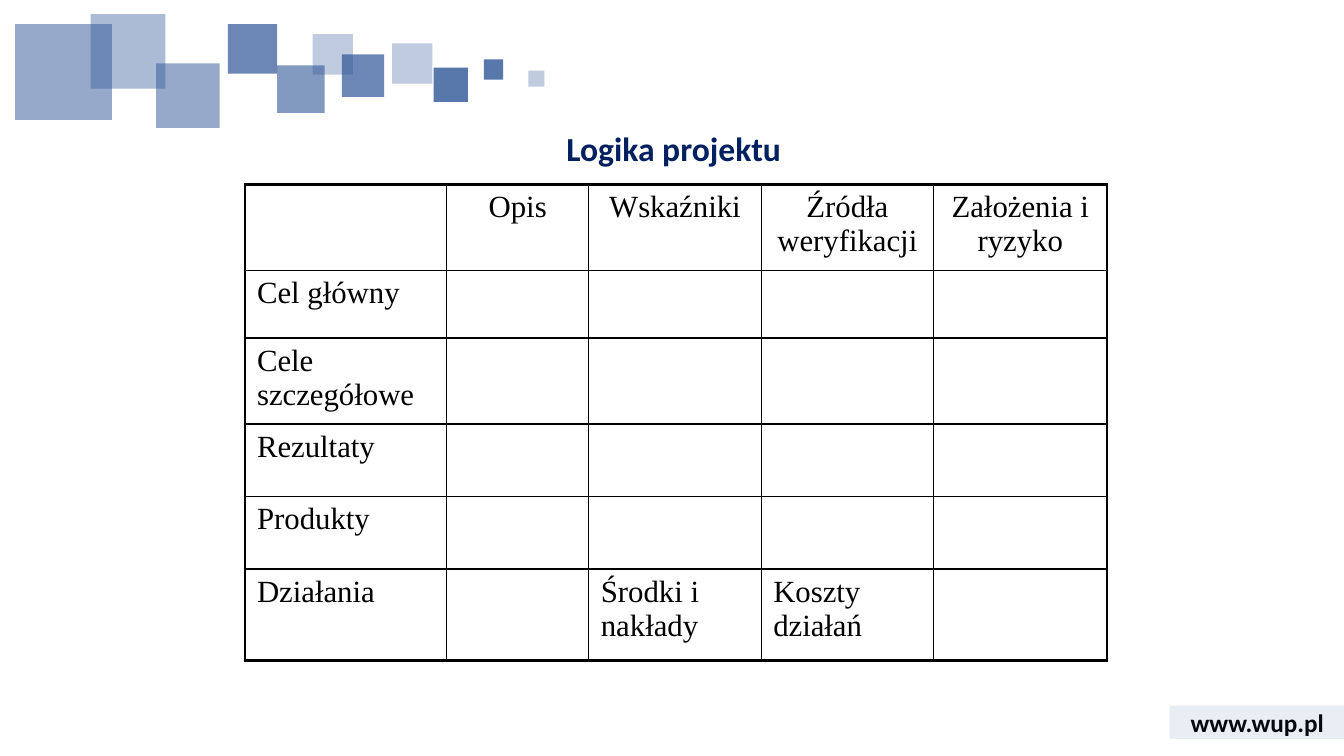
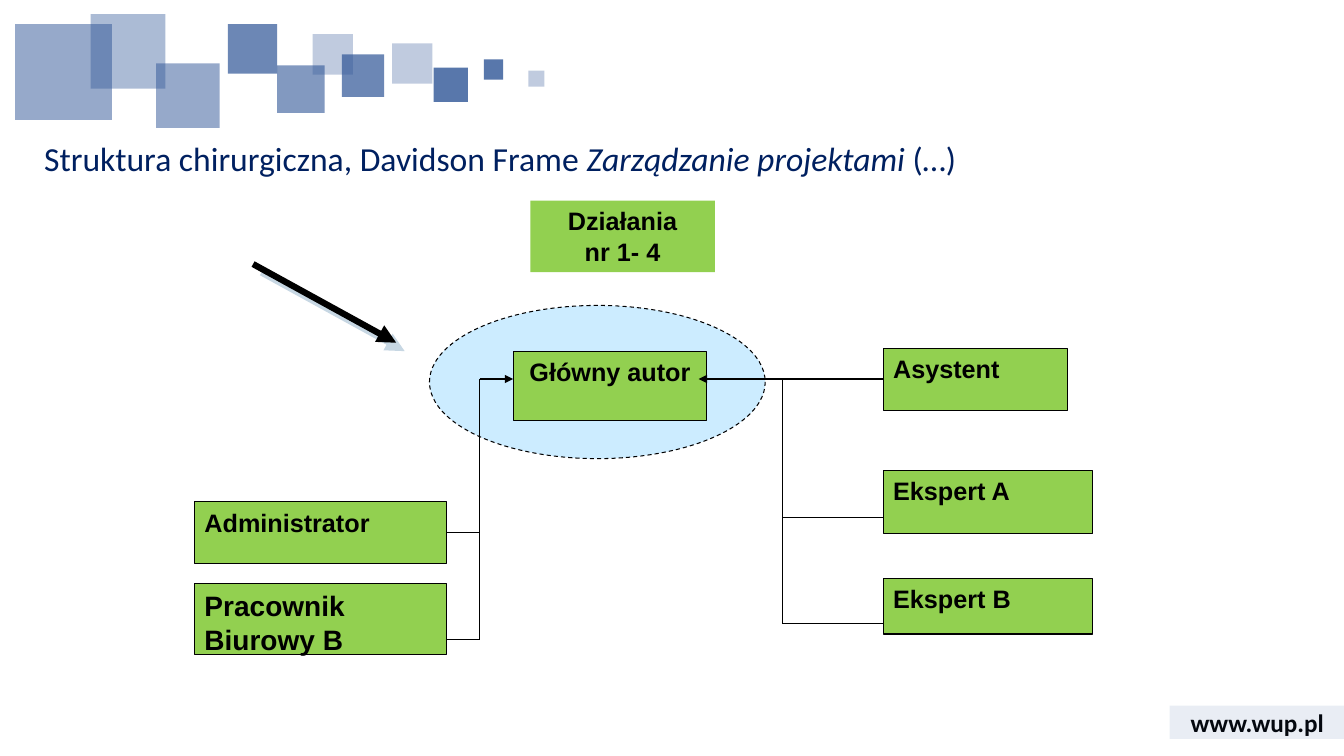
from lxml import etree
from pptx import Presentation
from pptx.dml.color import RGBColor
from pptx.enum.dml import MSO_LINE
from pptx.enum.shapes import MSO_CONNECTOR, MSO_SHAPE
from pptx.enum.text import MSO_ANCHOR, PP_ALIGN
from pptx.oxml.ns import qn
from pptx.util import Inches, Pt

BLACK = RGBColor(0x00, 0x00, 0x00)
NAVY = RGBColor(0x00, 0x20, 0x60)
BLUE = RGBColor(0x2F, 0x55, 0x97)
PALE_BLUE = RGBColor(0xCC, 0xEC, 0xFF)
SHADOW_BLUE = RGBColor(0xC7, 0xD7, 0xE3)
GREEN = RGBColor(0x92, 0xD0, 0x50)
TITLE_STYLE = {"font": "Calibri", "size": 24, "color": NAVY}


def write(frame, text, font, size, color=BLACK, bold=False, align=PP_ALIGN.LEFT):
    frame.text = text
    for paragraph in frame.paragraphs:
        paragraph.alignment = align
        paragraph.font.name = font
        paragraph.font.size = Pt(size)
        paragraph.font.color.rgb = color
        paragraph.font.bold = bold


def add_line(slide, x1, y1, x2, y2, width=0.75, arrow=False):
    """Draw a black line without shadow and return its empty effect list."""
    line = slide.shapes.add_connector(
        MSO_CONNECTOR.STRAIGHT, Inches(x1), Inches(y1), Inches(x2), Inches(y2))
    line.line.width = Pt(width)
    line.line.color.rgb = BLACK
    if arrow:
        etree.SubElement(line.line._get_or_add_ln(), qn("a:tailEnd"), type="triangle")
    return etree.SubElement(line.element.spPr, qn("a:effectLst"))


prs = Presentation()
prs.slide_width = Inches(13.33)
prs.slide_height = Inches(7.5)
blank = prs.slide_layouts[6]
for placeholder in list(blank.placeholders):
    placeholder.element.getparent().remove(placeholder.element)

logic = prs.slides.add_slide(blank)
structure = prs.slides.add_slide(blank)

# Shared banner and footer: drawn once, then moved to the layout
footer = logic.shapes.add_textbox(Inches(11.67), Inches(6.97), Inches(1.6), Inches(0.4))
footer.text_frame.word_wrap = True
footer.text_frame.vertical_anchor = MSO_ANCHOR.MIDDLE
write(footer.text_frame, "www.wup.pl", "Calibri", 18, bold=True, align=PP_ALIGN.CENTER)

# left, top, width, height, opacity in percent
BLUE_BLOCKS = [
    (3.89, 0.43, 0.4, 0.4, 30),
    (4.3, 0.67, 0.34, 0.34, 80),
    (3.39, 0.54, 0.42, 0.42, 70),
    (0.15, 0.24, 0.96, 0.95, 50),
    (2.75, 0.65, 0.47, 0.47, 60),
    (1.55, 0.63, 0.63, 0.64, 50),
    (0.9, 0.14, 0.74, 0.74, 40),
    (4.8, 0.59, 0.19, 0.2, 80),
    (2.26, 0.24, 0.49, 0.49, 70),
    (3.1, 0.34, 0.4, 0.4, 30),
    (5.24, 0.7, 0.16, 0.16, 30),
    (11.6, 7, 1.73, 0.33, 10),
]
for *box, opacity in BLUE_BLOCKS:
    block = logic.shapes.add_shape(MSO_SHAPE.RECTANGLE, *map(Inches, box))
    block.shadow.inherit = False
    block.line.fill.background()
    block.fill.solid()
    block.fill.fore_color.rgb = BLUE
    color = block.element.spPr.find(f"{qn('a:solidFill')}/{qn('a:srgbClr')}")
    etree.SubElement(color, qn("a:alpha"), val=str(opacity * 1000))

for shared in list(logic.shapes):
    blank.shapes.element.append(shared.element)

# Slide 1: project logic table
COLUMN_WIDTHS = [2, 1.41, 1.71, 1.71, 1.72]
ROW_HEIGHTS = [0.85, 0.67, 0.85, 0.72, 0.72, 0.91]
MATRIX = [
    ["", "Opis", "Wskaźniki", "Źródła weryfikacji", "Założenia i ryzyko"],
    ["Cel główny", "", "", "", ""],
    ["Cele szczegółowe", "", "", "", ""],
    ["Rezultaty", "", "", "", ""],
    ["Produkty", "", "", "", ""],
    ["Działania", "", "Środki i nakłady", "Koszty działań", ""],
]
last_row, last_column = len(ROW_HEIGHTS) - 1, len(COLUMN_WIDTHS) - 1
matrix = logic.shapes.add_table(
    len(ROW_HEIGHTS), len(COLUMN_WIDTHS), Inches(2.43), Inches(1.83),
    Inches(sum(COLUMN_WIDTHS)), Inches(sum(ROW_HEIGHTS))).table
matrix.first_row = False
matrix.horz_banding = False
for column, width in zip(matrix.columns, COLUMN_WIDTHS):
    column.width = Inches(width)
for row, height in zip(matrix.rows, ROW_HEIGHTS):
    row.height = Inches(height)

for r, texts in enumerate(MATRIX):
    for c, text in enumerate(texts):
        cell = matrix.cell(r, c)
        cell.margin_left = cell.margin_right = Inches(0.12)
        cell.margin_top = cell.margin_bottom = Inches(0.06)
        write(cell.text_frame, text, "Times New Roman", 22,
              align=PP_ALIGN.CENTER if r == 0 else PP_ALIGN.LEFT)
        outer_edges = {"lnL": c == 0, "lnR": c == last_column,
                       "lnT": r == 0, "lnB": r == last_row}
        properties = cell._tc.get_or_add_tcPr()
        for edge, is_outer in outer_edges.items():
            border = etree.SubElement(properties, qn(f"a:{edge}"),
                                      w=str(Pt(2.25 if is_outer else 1)))
            fill = etree.SubElement(border, qn("a:solidFill"))
            etree.SubElement(fill, qn("a:srgbClr"), val=str(BLACK))
        cell.fill.background()

title = logic.shapes.add_textbox(Inches(5.52), Inches(1.22), Inches(2.36), Inches(0.5))
title.text_frame.word_wrap = False
write(title.text_frame, "Logika projektu", bold=True, **TITLE_STYLE)

# Slide 2: surgical team structure
title = structure.shapes.add_textbox(Inches(0.34), Inches(1.36), Inches(12.41), Inches(0.55))
title.text_frame.word_wrap = True
write(title.text_frame, "Struktura chirurgiczna, Davidson Frame ", **TITLE_STYLE)
heading = title.text_frame.paragraphs[0]
heading.line_spacing = 0.9
book = heading.add_run()
book.text = "Zarządzanie projektami "
book.font.italic = True
heading.add_run().text = "(…)"

core = structure.shapes.add_shape(
    MSO_SHAPE.OVAL, Inches(4.26), Inches(3.03), Inches(3.33), Inches(1.52))
core.shadow.inherit = False
core.fill.solid()
core.fill.fore_color.rgb = PALE_BLUE
core.line.color.rgb = BLACK
core.line.width = Pt(0.75)
core.line.dash_style = MSO_LINE.DASH

# text, left, top, width, height, size, alignment, outlined
ROLES = [
    ("Główny autor", 5.09, 3.49, 1.92, 0.68, 18, PP_ALIGN.CENTER, True),
    ("Działania\nnr 1- 4", 5.26, 1.99, 1.83, 0.71, 18, PP_ALIGN.CENTER, False),
    ("Asystent", 8.76, 3.46, 1.83, 0.61, 18, PP_ALIGN.LEFT, True),
    ("Ekspert A", 8.76, 4.67, 2.08, 0.62, 18, PP_ALIGN.LEFT, True),
    ("Ekspert B", 8.76, 5.74, 2.08, 0.55, 18, PP_ALIGN.LEFT, True),
    ("Administrator", 1.93, 4.98, 2.5, 0.61, 18, PP_ALIGN.LEFT, True),
    ("Pracownik\nBiurowy B", 1.93, 5.79, 2.5, 0.7, 20, PP_ALIGN.LEFT, True),
]
for text, *box, size, align, outlined in ROLES:
    role = structure.shapes.add_shape(MSO_SHAPE.RECTANGLE, *map(Inches, box))
    role.shadow.inherit = False
    role.fill.solid()
    role.fill.fore_color.rgb = GREEN
    if outlined:
        role.line.color.rgb = BLACK
        role.line.width = Pt(0.75)
    else:
        role.line.fill.background()
    role.text_frame.vertical_anchor = MSO_ANCHOR.TOP
    write(role.text_frame, text, "Arial", size, bold=True, align=align)

# Each trunk: x, arrow tip x, role edge x, heights of its branches
AUTHOR_Y = 3.76
for trunk_x, tip_x, role_x, branches in [
    (4.76, 5.09, 4.43, [5.28, 6.34]),
    (7.76, 6.93, 8.76, [AUTHOR_Y, 5.13, 6.19]),
]:
    add_line(structure, trunk_x, AUTHOR_Y, trunk_x, branches[-1])
    add_line(structure, trunk_x, AUTHOR_Y, tip_x, AUTHOR_Y, arrow=True)
    for y in branches:
        add_line(structure, role_x, y, trunk_x, y)

effects = add_line(structure, 2.51, 2.62, 3.93, 3.4, width=4.5, arrow=True)
shadow = etree.SubElement(effects, qn("a:outerShdw"), blurRad="0", dist=str(Pt(8.5)),
                          dir=str(45 * 60000), algn="ctr", rotWithShape="0")
etree.SubElement(shadow, qn("a:srgbClr"), val=str(SHADOW_BLUE))

prs.save("out.pptx")
